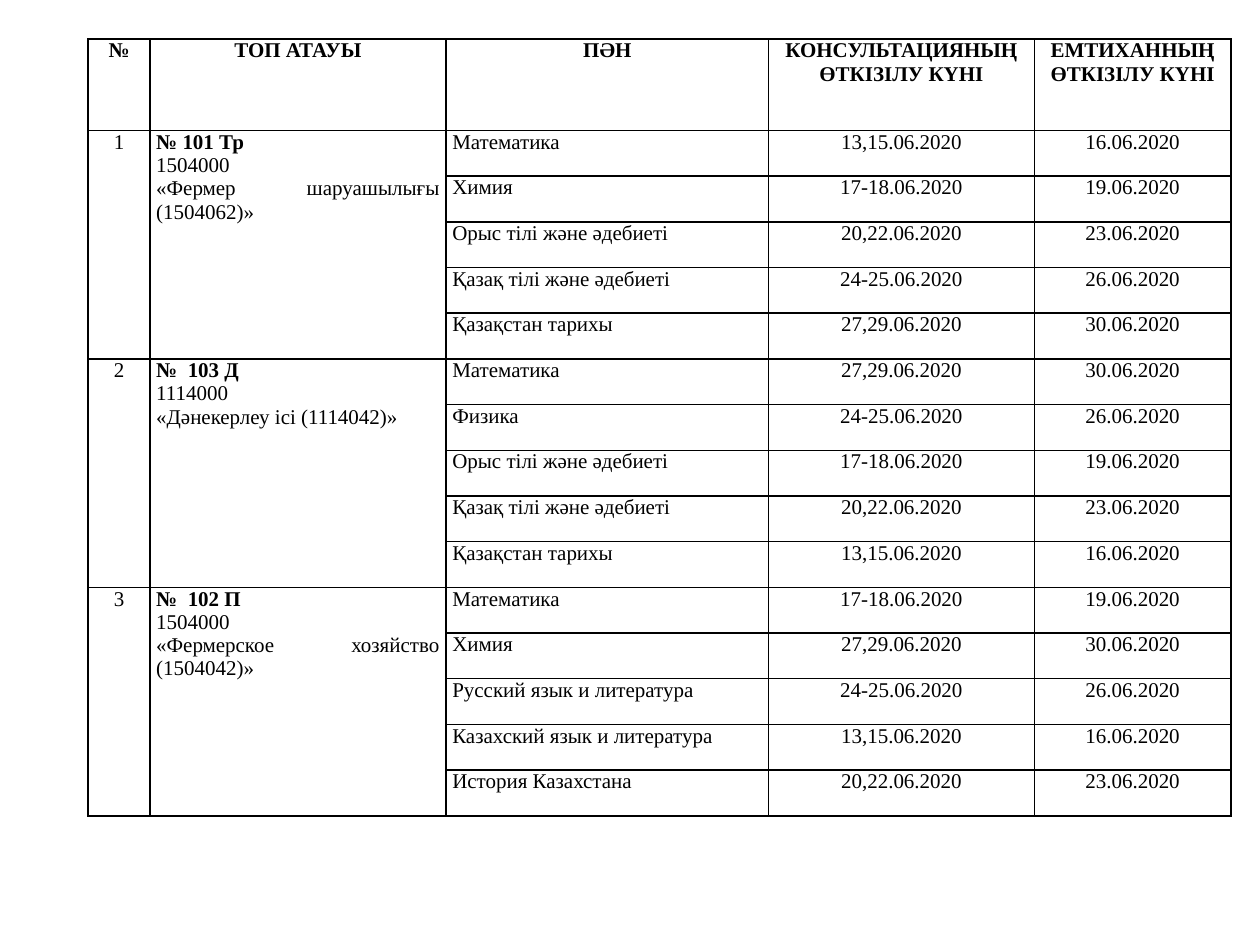
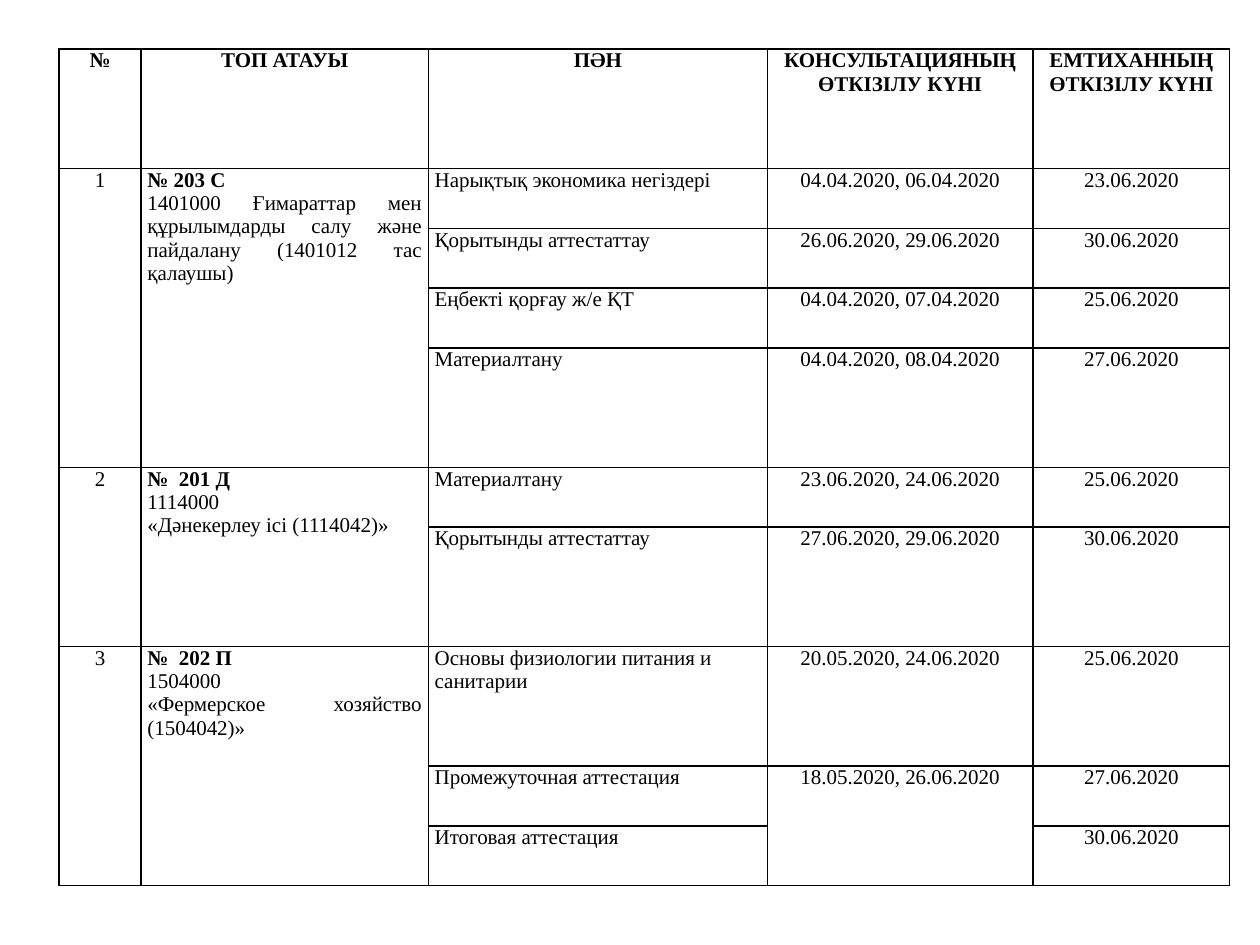
from lxml import etree
from pptx import Presentation
from pptx.dml.color import RGBColor
from pptx.enum.text import PP_ALIGN
from pptx.oxml.ns import qn
from pptx.util import Inches, Pt

CENTER, LEFT, JUSTIFY = PP_ALIGN.CENTER, PP_ALIGN.LEFT, PP_ALIGN.JUSTIFY
COLORS = {"ink": "000000", "paper": "FFFFFF"}
FONT = "Times New Roman"
HEADINGS = ["№", "ТОП АТАУЫ", "ПӘН", "КОНСУЛЬТАЦИЯНЫҢ ӨТКІЗІЛУ КҮНІ",
            "ЕМТИХАННЫҢ ӨТКІЗІЛУ КҮНІ"]
BLANK_LAYOUT = 6

# Each group: lines of its name, then (subject, consultation, exam) rows.
# A consultation of None continues the one above.
FIRST_YEAR = [
    (["№ 101 Тр", "1504000", "«Фермер шаруашылығы (1504062)»"], [
        ("Математика", "13,15.06.2020", "16.06.2020"),
        ("Химия", "17-18.06.2020", "19.06.2020"),
        ("Орыс тілі және әдебиеті", "20,22.06.2020", "23.06.2020"),
        ("Қазақ тілі және әдебиеті", "24-25.06.2020", "26.06.2020"),
        ("Қазақстан тарихы", "27,29.06.2020", "30.06.2020")]),
    (["№  103 Д", "1114000", "«Дәнекерлеу ісі (1114042)»"], [
        ("Математика", "27,29.06.2020", "30.06.2020"),
        ("Физика", "24-25.06.2020", "26.06.2020"),
        ("Орыс тілі және әдебиеті", "17-18.06.2020", "19.06.2020"),
        ("Қазақ тілі және әдебиеті", "20,22.06.2020", "23.06.2020"),
        ("Қазақстан тарихы", "13,15.06.2020", "16.06.2020")]),
    (["№  102 П", "1504000", "«Фермерское хозяйство (1504042)»"], [
        ("Математика", "17-18.06.2020", "19.06.2020"),
        ("Химия", "27,29.06.2020", "30.06.2020"),
        ("Русский язык и литература", "24-25.06.2020", "26.06.2020"),
        ("Казахский язык и литература", "13,15.06.2020", "16.06.2020"),
        ("История Казахстана", "20,22.06.2020", "23.06.2020")]),
]
SECOND_YEAR = [
    (["№ 203 С", "1401000 Ғимараттар мен құрылымдарды салу және пайдалану "
      "(1401012 тас қалаушы)"], [
        ("Нарықтық экономика негіздері", "04.04.2020, 06.04.2020", "23.06.2020"),
        ("Қорытынды аттестаттау", "26.06.2020, 29.06.2020", "30.06.2020"),
        ("Еңбекті қорғау ж/е ҚТ", "04.04.2020, 07.04.2020", "25.06.2020"),
        ("Материалтану", "04.04.2020, 08.04.2020", "27.06.2020")]),
    (["№  201 Д", "1114000", "«Дәнекерлеу ісі (1114042)»"], [
        ("Материалтану", "23.06.2020, 24.06.2020", "25.06.2020"),
        ("Қорытынды аттестаттау", "27.06.2020, 29.06.2020", "30.06.2020")]),
    (["№  202 П", "1504000", "«Фермерское хозяйство (1504042)»"], [
        ("Основы физиологии питания и санитарии", "20.05.2020, 24.06.2020",
         "25.06.2020"),
        ("Промежуточная аттестация", "18.05.2020, 26.06.2020", "27.06.2020"),
        ("Итоговая аттестация", None, "30.06.2020")]),
]

# Groups, left, top, height, column widths, double-height rows
SCHEDULES = [
    (FIRST_YEAR, 0.7, 0.31, 6.17, [0.49, 2.35, 2.56, 2.11, 1.56], {0}),
    (SECOND_YEAR, 0.47, 0.39, 6.64, [0.65, 2.28, 2.69, 2.11, 1.56], {0, 4, 6, 7}),
]


def frame_cell(cell):
    """Give the cell narrow margins, thin borders and a plain fill."""
    cell.margin_left = cell.margin_right = Inches(0.05)
    cell.margin_top = cell.margin_bottom = 0
    properties = cell._tc.get_or_add_tcPr()
    for side in ("a:lnL", "a:lnR", "a:lnT", "a:lnB"):
        border = etree.SubElement(properties, qn(side), w=str(Pt(1)))
        ink = etree.SubElement(border, qn("a:solidFill"))
        etree.SubElement(ink, qn("a:srgbClr"), val=COLORS["ink"])
    cell.fill.solid()
    cell.fill.fore_color.rgb = RGBColor.from_string(COLORS["paper"])


def write_cell(cell, lines, align, bold_lines=0):
    cell.text = "\n".join(lines)
    for number, paragraph in enumerate(cell.text_frame.paragraphs):
        paragraph.alignment = align
        paragraph.font.name = FONT
        paragraph.font.size = Pt(12)
        paragraph.font.bold = number < bold_lines
        paragraph.font.color.rgb = RGBColor.from_string(COLORS["ink"])


prs = Presentation()
prs.slide_width, prs.slide_height = Inches(10), Inches(7.5)

for groups, left, top, height, widths, double_rows in SCHEDULES:
    slide = prs.slides.add_slide(prs.slide_layouts[BLANK_LAYOUT])
    row_count = 1 + sum(len(exams) for _, exams in groups)
    schedule = slide.shapes.add_table(
        row_count, len(widths), Inches(left), Inches(top),
        Inches(sum(widths)), Inches(height)).table
    schedule.first_row = schedule.horz_banding = False

    for column, width in zip(schedule.columns, widths):
        column.width = Inches(width)
    unit = height / (row_count + len(double_rows))
    for index, row in enumerate(schedule.rows):
        row.height = Inches(unit * (2 if index in double_rows else 1))
    for cell in schedule.iter_cells():
        frame_cell(cell)

    for column, heading in enumerate(HEADINGS):
        write_cell(schedule.cell(0, column), [heading], CENTER, bold_lines=1)

    first = 1
    for number, (group_name, exams) in enumerate(groups, 1):
        last = first + len(exams) - 1
        for column in (0, 1):
            schedule.cell(first, column).merge(schedule.cell(last, column))
        write_cell(schedule.cell(first, 0), [str(number)], CENTER)
        write_cell(schedule.cell(first, 1), group_name, JUSTIFY, bold_lines=1)
        for row, (subject, consultation, exam) in enumerate(exams, first):
            write_cell(schedule.cell(row, 2), [subject], LEFT)
            if consultation:
                write_cell(schedule.cell(row, 3), [consultation], CENTER)
            else:
                schedule.cell(row - 1, 3).merge(schedule.cell(row, 3))
            write_cell(schedule.cell(row, 4), [exam], CENTER)
        first = last + 1

prs.save("out.pptx")
